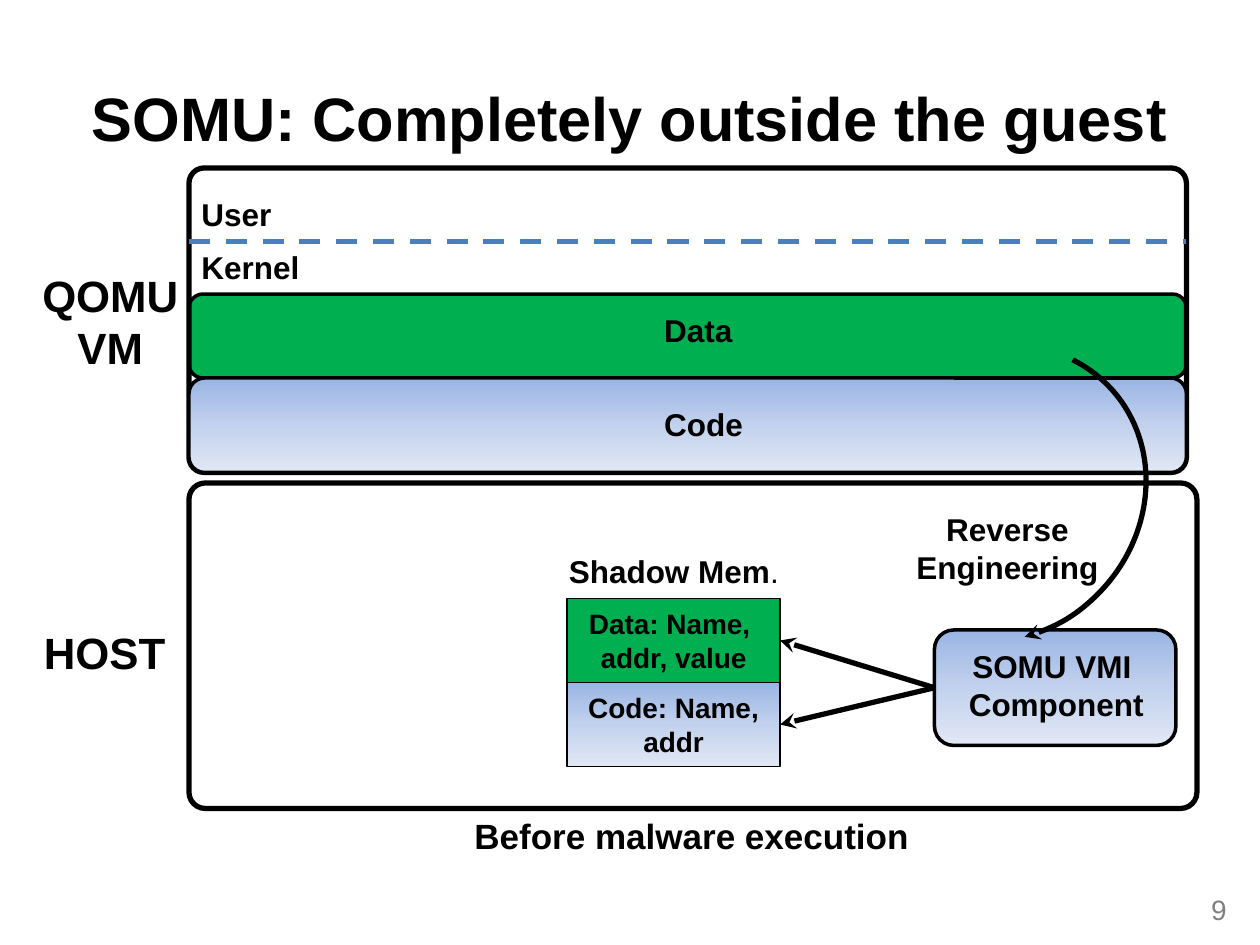
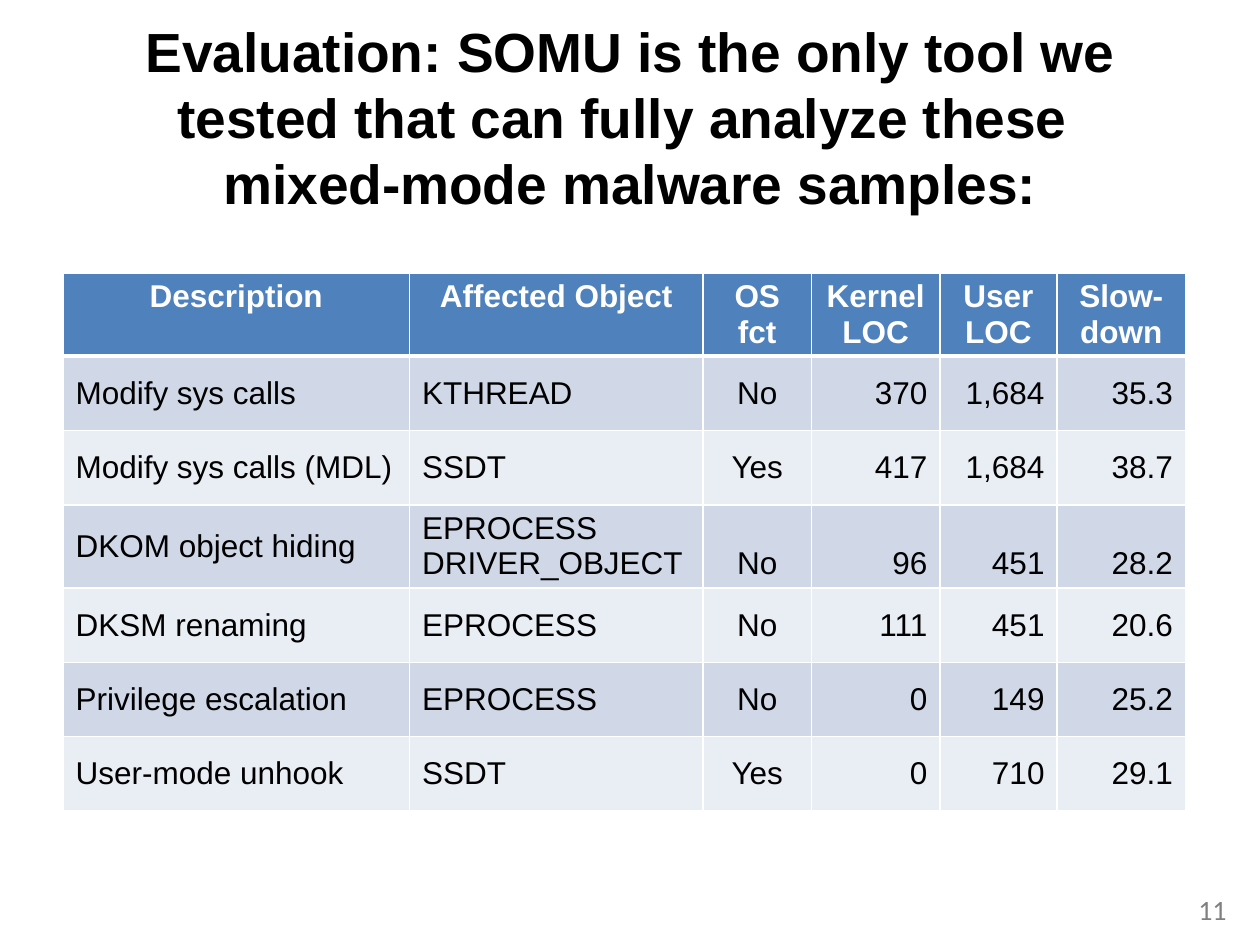
from copy import deepcopy
from dataclasses import dataclass

from lxml.etree import SubElement
from pptx import Presentation
from pptx.dml.color import RGBColor
from pptx.enum.dml import MSO_LINE
from pptx.enum.shapes import MSO_CONNECTOR, MSO_SHAPE as Preset
from pptx.enum.text import MSO_ANCHOR as Anchor, MSO_AUTO_SIZE as AutoSize, PP_ALIGN as Align
from pptx.oxml.ns import qn
from pptx.util import Inches, Pt


@dataclass(frozen=True)
class Theme:
    font: str = "Arial"
    number_font: str = "Calibri"
    black: str = "000000"
    white: str = "FFFFFF"
    grey: str = "808080"
    green: str = "00B050"
    dash_blue: str = "4B7EBC"
    header_blue: str = "4F81BD"
    bands: tuple = ("D0D8E8", "E9EDF4")
    code_gradient: tuple = ("9AB5E4", "C2D1ED", "E1E8F5")
    title: float = 35
    long_title: float = 31.5
    side: float = 25
    caption: float = 20
    body: float = 18
    small: float = 16
    thin: float = 0.75
    medium: float = 2
    thick: float = 3


THEME = Theme()
COLUMNS, ROWS = 120, 90
LABEL_HEIGHT = 4.8


def grid(*units):
    """Turn grid units, twelve to the inch, into lengths."""
    return [Inches(unit / 12) for unit in units]


def rgb(colour):
    return RGBColor.from_string(colour)


def style_text(frame, size, colour=THEME.black, bold=True, align=Align.CENTER,
               font=THEME.font):
    for para in frame.paragraphs:
        para.alignment = align
        for span in para.runs:
            span.font.name = font
            span.font.size = Pt(size)
            span.font.bold = bold
            span.font.color.rgb = rgb(colour)


def add_label(page, text, area, size=THEME.body, wrap=False, grow=True,
              anchor=Anchor.TOP, **style):
    frame = page.shapes.add_textbox(*grid(*area)).text_frame
    frame.text = text
    frame.word_wrap = wrap
    frame.auto_size = AutoSize.SHAPE_TO_FIT_TEXT if grow else AutoSize.NONE
    frame.vertical_anchor = anchor
    style_text(frame, size, **style)
    return frame


def add_title(page, text, size):
    add_label(page, text, (6, 3.6, COLUMNS - 12, 15), size, wrap=True, grow=False,
              anchor=Anchor.MIDDLE)


def add_page_number(page, number, font):
    add_label(page, str(number), (90, 84.2, 28, LABEL_HEIGHT), THEME.small, wrap=True,
              grow=False, anchor=Anchor.MIDDLE, align=Align.RIGHT, bold=False,
              colour=THEME.grey, font=font)


def paint_gradient(shape, colours):
    """Fill from top to bottom with three evenly spaced colours."""
    shape.fill.gradient()
    shape.fill.gradient_angle = 270
    stop_list = shape._element.spPr.find(".//" + qn("a:gsLst"))
    stop_list.insert(1, deepcopy(stop_list[0]))
    for index, (stop, colour) in enumerate(zip(shape.fill.gradient_stops, colours)):
        stop.position = index / (len(colours) - 1)
        stop.color.rgb = rgb(colour)


def add_block(page, area, fill=None, preset=Preset.ROUNDED_RECTANGLE,
              line=THEME.medium, adjust=()):
    """Add an outlined shape, filled with one colour, a gradient or nothing."""
    shape = page.shapes.add_shape(preset, *grid(*area))
    shape.shadow.inherit = False
    shape.line.color.rgb = rgb(THEME.black)
    shape.line.width = Pt(line)
    for index, value in enumerate(adjust):
        shape.adjustments[index] = value
    if fill is None:
        shape.fill.background()
    elif isinstance(fill, tuple):
        paint_gradient(shape, fill)
    else:
        shape.fill.solid()
        shape.fill.fore_color.rgb = rgb(fill)
    return shape


def add_memory_cell(page, text, top, fill):
    shape = add_block(page, (54, top, 20.3, 8), fill, Preset.RECTANGLE, THEME.thin)
    frame = shape.text_frame
    frame.text = text
    frame.word_wrap = True
    frame.vertical_anchor = Anchor.MIDDLE
    style_text(frame, THEME.small)


def add_arrowhead(shape):
    line = shape.line._get_or_add_ln()
    SubElement(line, qn("a:tailEnd"), type="stealth")


def add_line(page, start, end, colour=THEME.black):
    line = page.shapes.add_connector(MSO_CONNECTOR.STRAIGHT, *grid(*start, *end))
    line.line.color.rgb = rgb(colour)
    line.line.width = Pt(THEME.thick)
    SubElement(line._element.spPr, qn("a:effectLst"))
    return line


def set_borders(cell, **widths):
    """Draw white cell edges; L, R, T and B give widths in points."""
    properties = cell._tc.get_or_add_tcPr()
    for side, width in widths.items():
        edge = SubElement(properties, qn(f"a:ln{side}"), w=str(Pt(width)))
        SubElement(SubElement(edge, qn("a:solidFill")), qn("a:srgbClr"), val=THEME.white)


def add_data_table(page, area, widths, heights, rows, aligns, raised):
    """Add a banded table; raised lists cells whose text sits at the bottom."""
    table = page.shapes.add_table(len(rows), len(widths), *grid(*area)).table
    for column, width in zip(table.columns, widths):
        column.width = Inches(width)
    for index, (row, values) in enumerate(zip(table.rows, rows)):
        header = index == 0
        row.height = Inches(heights[min(index, 1)])
        for position, (cell, value) in enumerate(zip(row.cells, values)):
            set_borders(cell, L=1, R=1, T=3 if index == 1 else 1, B=3 if header else 1)
            cell.fill.solid()
            cell.fill.fore_color.rgb = rgb(
                THEME.header_blue if header else THEME.bands[(index - 1) % 2])
            cell.text_frame.text = value
            if header:
                cell.vertical_anchor = Anchor.TOP
            elif (index, position) in raised:
                cell.vertical_anchor = Anchor.BOTTOM
            else:
                cell.vertical_anchor = Anchor.MIDDLE
            style_text(cell.text_frame, THEME.body, bold=header,
                       colour=THEME.white if header else THEME.black,
                       align=Align.CENTER if header else aligns[position])


def build_architecture(page):
    left, width = 18, 95
    add_block(page, (left, 28, width, 8), THEME.green)
    add_title(page, "SOMU: Completely outside the guest", THEME.title)
    add_page_number(page, 9, THEME.font)

    add_block(page, (left, 16, width, 29), line=THEME.thick, adjust=(0.05,))
    add_label(page, "QOMU\nVM", (2, 25, 17, 11.3), THEME.side)
    add_line(page, (left, 23), (left + width, 23), THEME.dash_blue).line.dash_style = MSO_LINE.DASH
    add_label(page, "User", (left, 18, 9.1, LABEL_HEIGHT), align=Align.LEFT)
    add_label(page, "Kernel", (left, 23, 11.9, LABEL_HEIGHT), align=Align.LEFT)

    add_block(page, (left, 46, width + 1, 31), line=THEME.thick, adjust=(0.05,))
    add_label(page, "HOST", (3, 59, 14, 6.2), THEME.side, align=Align.LEFT)
    add_block(page, (left, 36, width, 9), THEME.code_gradient)
    add_label(page, "Code", (56, 38, 22, LABEL_HEIGHT), wrap=True)
    add_label(page, "Data", (61, 29, 11, LABEL_HEIGHT), wrap=True)

    add_block(page, (89, 60, 23, 11), THEME.code_gradient)
    add_label(page, "SOMU VMI \nComponent", (91, 61, 19.2, 8.5))
    add_memory_cell(page, "Data: Name, \naddr, value", 57, THEME.green)
    add_memory_cell(page, "Code: Name, addr", 65, THEME.code_gradient)
    memory = add_label(page, "Shadow Mem", (53, 52, 23, LABEL_HEIGHT), wrap=True,
                       align=Align.LEFT)
    stop = memory.paragraphs[0].add_run()
    stop.text = "."
    stop.font.name = THEME.font
    stop.font.size = Pt(THEME.body)
    stop.font.color.rgb = rgb(THEME.black)

    inspection = add_block(page, (81.5, 32.3, 27, 29.5), preset=Preset.ARC,
                           line=THEME.thick, adjust=(152.3, 20.29))
    inspection.rotation = 45.4
    add_arrowhead(inspection)
    add_label(page, "Reverse\nEngineering", (86, 48, 19.9, 8.5))
    for target in (61, 69):
        add_arrowhead(add_line(page, (89, 65.5), (74.3, target)))
    add_label(page, "Before malware execution", (44, 77, 44, 5.3), THEME.caption,
              align=Align.LEFT)


def build_evaluation(page):
    add_title(page, "Evaluation: SOMU is the only tool we tested that can fully analyze "
                    "these \vmixed-mode malware samples:", THEME.long_title)
    add_page_number(page, 11, THEME.number_font)
    rows = [
        ("Description", "Affected Object", "OS fct", "Kernel\nLOC", "User\nLOC", "Slow-\vdown"),
        ("Modify sys calls", "KTHREAD", "No", "370", "1,684", "35.3"),
        ("Modify sys calls (MDL)", "SSDT", "Yes", "417", "1,684", "38.7"),
        ("DKOM object hiding", "EPROCESS\nDRIVER_OBJECT", "No", "96", "451", "28.2"),
        ("DKSM renaming", "EPROCESS", "No", "111", "451", "20.6"),
        ("Privilege escalation", "EPROCESS", "No", "0", "149", "25.2"),
        ("User-mode unhook", "SSDT", "Yes", "0", "710", "29.1"),
    ]
    add_data_table(page, (6, 26, 107, 52.3), (2.75, 2.33, 0.86, 1.02, 0.93, 1.02),
                   (0.52, 0.59), rows,
                   [Align.LEFT] * 2 + [Align.CENTER] + [Align.RIGHT] * 3,
                   raised={(3, column) for column in range(2, 6)})


def main():
    deck = Presentation()
    deck.slide_width, deck.slide_height = grid(COLUMNS, ROWS)
    for build in (build_architecture, build_evaluation):
        build(deck.slides.add_slide(deck.slide_layouts[6]))
    deck.save("out.pptx")


if __name__ == "__main__":
    main()
